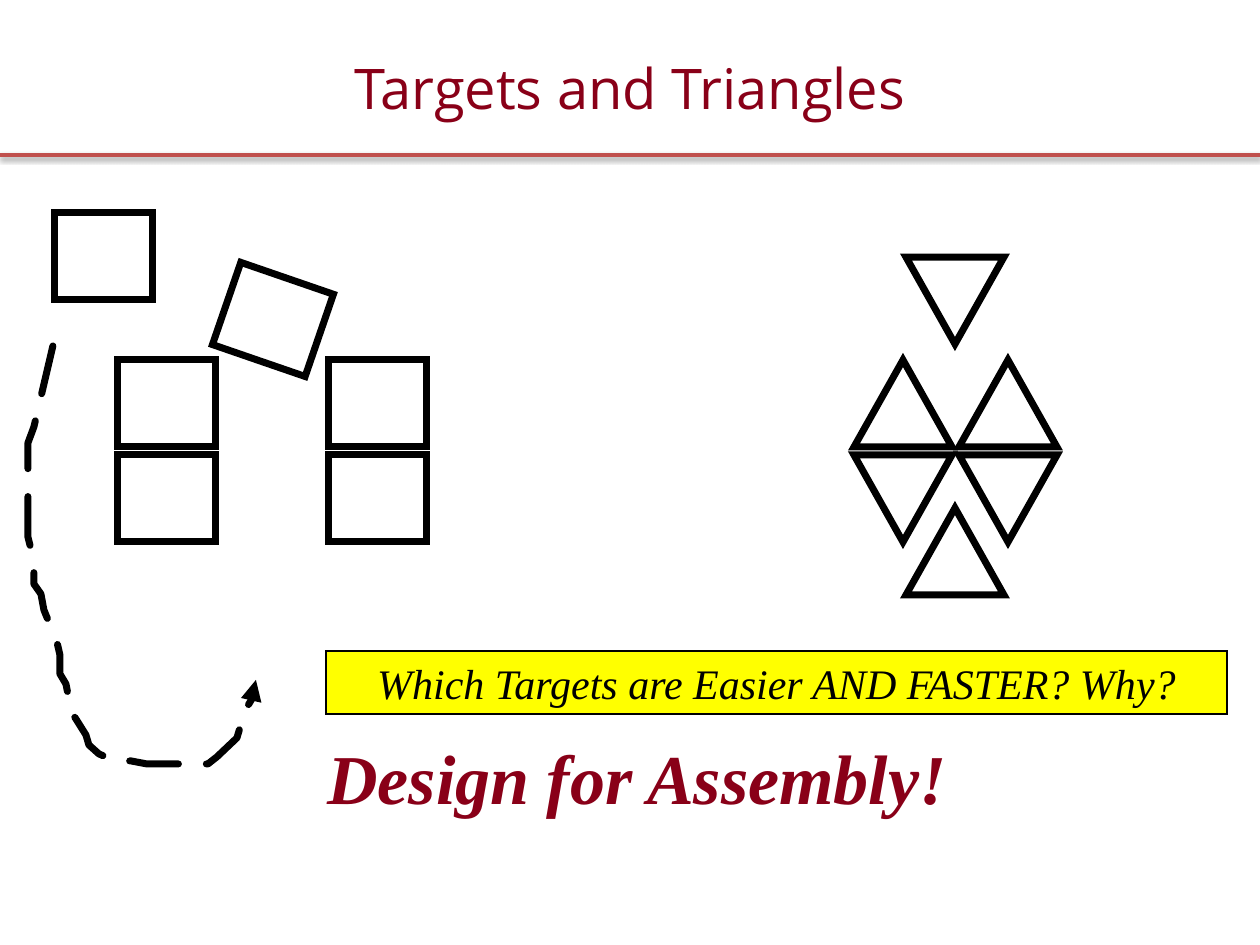
from dataclasses import dataclass

import pptx
import pptx.dml.color
import pptx.enum.dml
import pptx.enum.shapes
import pptx.enum.text
import pptx.oxml
import pptx.oxml.ns
import pptx.util

PX = 914400 / 126  # EMU in one px
SHAPE = pptx.enum.shapes.MSO_SHAPE
ALIGN = pptx.enum.text.PP_ALIGN
NS = pptx.oxml.ns.nsdecls("a")


@dataclass(frozen=True)
class Theme:
    maroon: str = "890018"
    rule: str = "C0504D"
    black: str = "000000"
    yellow: str = "FFFF00"
    heading_font: str = "Open Sans"
    body_font: str = "Times New Roman"
    title: int = 32
    question: int = 24
    slogan: int = 40
    thick: int = 4
    medium: int = 2
    thin: int = 1


def emu(*lengths):
    return [pptx.util.Emu(round(n * PX)) for n in lengths]


def rgb(color):
    return pptx.dml.color.RGBColor.from_string(color)


def write(tf, text, *, size, font, color, bold=False, italic=False,
          align=ALIGN.LEFT, anchor=pptx.enum.text.MSO_ANCHOR.TOP):
    tf.word_wrap = True
    tf.vertical_anchor = anchor
    p = tf.paragraphs[0]
    p.alignment = align
    p.space_before = pptx.util.Pt(0)
    r = p.add_run()
    r.text = text
    r.font.size = pptx.util.Pt(size)
    r.font.name = font
    r.font.color.rgb = rgb(color)
    r.font.bold = bold
    r.font.italic = italic


class Deck:
    def __init__(self, theme, width, height):
        self.theme = theme
        self.prs = pptx.Presentation()
        self.prs.slide_width, self.prs.slide_height = emu(width, height)
        self.s = self.prs.slides.add_slide(self.prs.slide_layouts[5])

    def outline(self, sp, color, width, join="<a:miter %s lim='800000'/>"):
        sp.line.color.rgb = rgb(color)
        sp.line.width = pptx.util.Pt(width)
        ln = sp.line._get_or_add_ln()
        ln.append(pptx.oxml.parse_xml(join % NS))
        return ln

    def title(self, text, box):
        sp = self.s.shapes.title
        sp.left, sp.top, sp.width, sp.height = emu(*box)
        write(sp.text_frame, text, size=self.theme.title, font=self.theme.heading_font,
              color=self.theme.maroon, align=ALIGN.CENTER,
              anchor=pptx.enum.text.MSO_ANCHOR.MIDDLE)

    def rule(self, x1, x2, y):
        line = self.s.shapes.add_connector(
            pptx.enum.shapes.MSO_CONNECTOR.STRAIGHT, *emu(x1, y, x2, y))
        line.line.color.rgb = rgb(self.theme.rule)
        line.line.width = pptx.util.Pt(self.theme.medium)
        line._element.spPr.append(pptx.oxml.parse_xml(
            f'<a:effectLst {NS}><a:outerShdw blurRad="40000" dist="20000" dir="5400000" '
            f'rotWithShape="0"><a:srgbClr val="{self.theme.black}"><a:alpha val="38000"/>'
            '</a:srgbClr></a:outerShdw></a:effectLst>'))

    def shape(self, kind, box, rotation=0, fill=None, width=None):
        sp = self.s.shapes.add_shape(kind, *emu(*box))
        sp.shadow.inherit = False
        sp.rotation = rotation
        if fill:
            sp.fill.solid()
            sp.fill.fore_color.rgb = rgb(fill)
        else:
            sp.fill.background()
        self.outline(sp, self.theme.black, width or self.theme.thick)
        return sp

    def dashed_arrow(self, points):
        builder = self.s.shapes.build_freeform(*points[0], scale=PX)
        builder.add_line_segments(points[1:], close=False)
        sp = builder.convert_to_shape()
        sp.shadow.inherit = False
        sp.fill.background()
        sp.line.dash_style = pptx.enum.dml.MSO_LINE.LONG_DASH
        ln = self.outline(sp, self.theme.black, self.theme.thick, "<a:round %s/>")
        ln.set("cap", "rnd")
        ln.append(pptx.oxml.parse_xml(f'<a:tailEnd {NS} type="triangle"/>'))

    def text(self, text, box, **style):
        write(self.s.shapes.add_textbox(*emu(*box)).text_frame, text, **style)

    def banner(self, text, box, **style):
        sp = self.shape(SHAPE.RECTANGLE, box, fill=self.theme.yellow, width=self.theme.thin)
        write(sp.text_frame, text, **style)


def main():
    theme = Theme()
    deck = Deck(theme, 1260, 945)
    size = (98, 87)
    rows = (360, 455)

    # Heading
    deck.rule(0, 1260, 155)
    deck.title("Targets and Triangles", (0, 45, 1260, 84))

    # Square targets, with one loose and one tilted square
    for x in (118, 329):
        for y in rows:
            deck.shape(SHAPE.RECTANGLE, (x, y, *size))
    deck.shape(SHAPE.RECTANGLE, (224, 276, *size), rotation=19)
    deck.shape(SHAPE.RECTANGLE, (55, 213, *size))

    # Triangle targets: upper row points up, lower row points down
    for x in (854, 959):
        for y, rotation in zip(rows, (0, 180)):
            deck.shape(SHAPE.ISOSCELES_TRIANGLE, (x, y, *size), rotation)
    for y, rotation in ((257, 180), (508, 0)):
        deck.shape(SHAPE.ISOSCELES_TRIANGLE, (906, y, *size), rotation)

    # Path of the loose square
    deck.dashed_arrow([
        (53, 346), (34, 427), (28, 443), (28, 537), (31, 549), (31, 559), (34, 568),
        (34, 584), (41, 594), (44, 610), (57, 642), (60, 655), (60, 674), (66, 684),
        (69, 699), (69, 709), (76, 719), (86, 735), (89, 745), (99, 754), (115, 761),
        (131, 761), (147, 764), (208, 764), (217, 757), (237, 738), (240, 728),
        (246, 719), (246, 709), (252, 699), (252, 690), (256, 680)])

    # Question and answer
    deck.text("Design for Assembly!", (315, 728, 663, 97), size=theme.slogan,
              font=theme.body_font, color=theme.maroon, bold=True, italic=True)
    deck.banner("Which Targets are Easier AND FASTER? Why?", (326, 651, 901, 63),
                size=theme.question, font=theme.body_font, color=theme.black,
                italic=True, align=ALIGN.CENTER)

    deck.prs.save("out.pptx")


if __name__ == "__main__":
    main()
